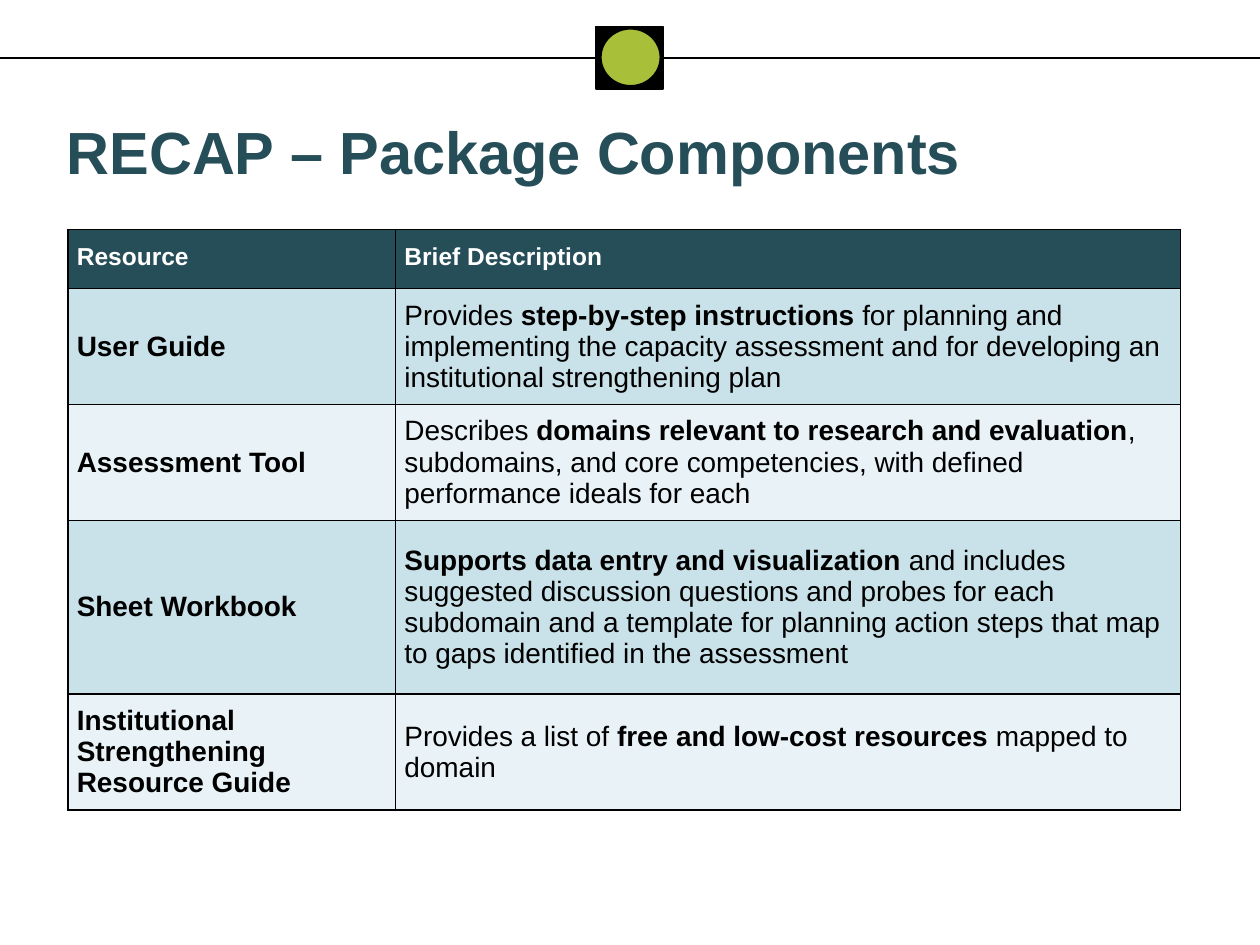
import pptx
import pptx.util
import pptx.dml.color
import pptx.enum.shapes
import pptx.enum.text
import pptx.oxml
import pptx.oxml.ns
from dataclasses import dataclass

Inches = pptx.util.Inches
Pt = pptx.util.Pt
Shape = pptx.enum.shapes.MSO_SHAPE
Anchor = pptx.enum.text.MSO_ANCHOR


@dataclass(frozen=True)
class Theme:
    font: str = "Arial"
    black: str = "000000"
    white: str = "FFFFFF"
    teal: str = "264E59"
    green: str = "A7BF39"
    bands: tuple = ("C9E1E8", "E9F3F7")
    title: int = 34
    head: int = 14
    body: int = 16


def rgb(code):
    return pptx.dml.color.RGBColor.from_string(code)


class Deck:
    def __init__(self, theme):
        self.theme = theme
        self.file = pptx.Presentation()
        self.file.slide_width, self.file.slide_height = Inches(10), Inches(7.5)
        self.slide = self.file.slides.add_slide(self.file.slide_layouts[6])

    def text(self, para, runs, size, color):
        """Add (text, bold) runs to a paragraph."""
        for words, bold in runs:
            run = para.add_run()
            run.text = words
            run.font.name, run.font.size, run.font.bold = self.theme.font, Pt(size), bold
            run.font.color.rgb = rgb(color)

    def rule(self, start, end, width):
        line = self.slide.shapes.add_connector(
            pptx.enum.shapes.MSO_CONNECTOR.STRAIGHT, *map(Inches, start + end))
        line.line.color.rgb = rgb(self.theme.black)
        line.line.width = Pt(width)
        props = line._element.spPr
        props.append(pptx.oxml.parse_xml(
            f'<a:effectLst {pptx.oxml.ns.nsdecls("a")}/>'))

    def shape(self, kind, box, fill, width):
        item = self.slide.shapes.add_shape(kind, *map(Inches, box))
        item.shadow.inherit = False
        item.fill.solid()
        item.fill.fore_color.rgb = rgb(fill)
        item.line.color.rgb = rgb(self.theme.black)
        item.line.width = Pt(width)

    def title(self, words, box):
        frame = self.slide.shapes.add_textbox(*map(Inches, box)).text_frame
        frame.word_wrap = True
        frame.margin_left = 0
        para = frame.paragraphs[0]
        para.space_after = Pt(8)
        self.text(para, [(words, True)], self.theme.title, self.theme.teal)

    def border(self, cell, width):
        """Draw all four cell edges; they must come before the fill."""
        props = cell._tc.get_or_add_tcPr()
        for spot, side in enumerate(("lnL", "lnR", "lnT", "lnB")):
            props.insert(spot, pptx.oxml.parse_xml(
                f'<a:{side} {pptx.oxml.ns.nsdecls("a")} w="{Pt(width)}"><a:solidFill>'
                f'<a:srgbClr val="{self.theme.black}"/></a:solidFill></a:{side}>'))

    def cell(self, cell, runs, fill, size, color, pitch=None):
        cell.fill.solid()
        cell.fill.fore_color.rgb = rgb(fill)
        cell.vertical_anchor = Anchor.MIDDLE
        cell.margin_left = cell.margin_right = Inches(0.07)
        cell.margin_top = cell.margin_bottom = 0
        para = cell.text_frame.paragraphs[0]
        if pitch:
            para.line_spacing = Pt(pitch)
        self.text(para, runs, size, color)
        self.border(cell, 1)

    def table(self, spot, widths, heights, head, rows):
        look = self.theme
        box = (*spot, sum(widths), sum(heights))
        grid = self.slide.shapes.add_table(
            len(heights), len(widths), *map(Inches, box)).table
        for col, width in zip(grid.columns, widths):
            col.width = Inches(width)
        for row, height in zip(grid.rows, heights):
            row.height = Inches(height)
        for c, words in enumerate(head):
            self.cell(grid.cell(0, c), [(words, True)], look.teal,
                      look.head, look.white, pitch=13)
        for r, (name, runs) in enumerate(rows, 1):
            fill = look.bands[(r - 1) % 2]
            for c, part in enumerate(([(name, True)], runs)):
                self.cell(grid.cell(r, c), part, fill, look.body, look.black)


ROWS = [
    ("User Guide", [
        ("Provides ", False), ("step-by-step instructions ", True),
        ("for planning and implementing the capacity assessment and for "
         "developing an institutional strengthening plan", False)]),
    ("Assessment Tool", [
        ("Describes ", False),
        ("domains relevant to research and evaluation", True),
        (", subdomains, and core competencies, with defined performance "
         "ideals for each", False)]),
    ("Sheet Workbook", [
        ("Supports data entry and visualization ", True),
        ("and includes suggested discussion questions and probes for each "
         "subdomain and a template for planning action steps that map to "
         "gaps identified in the assessment", False)]),
    ("Institutional Strengthening Resource Guide", [
        ("Provides a list of ", False), ("free and low-cost resources ", True),
        ("mapped to domain", False)]),
]


def main():
    theme = Theme()
    deck = Deck(theme)
    deck.rule((0, 0.46), (10, 0.46), 0.75)
    deck.shape(Shape.RECTANGLE, (4.73, 0.21, 0.53, 0.5), theme.black, 1)
    deck.shape(Shape.OVAL, (4.77, 0.23, 0.47, 0.45), theme.green, 0.75)
    deck.title("RECAP – Package Components", (0.53, 0.86, 7.47, 0.92))
    deck.table((0.54, 1.82), (2.6, 6.23), (0.47, 0.92, 0.92, 1.38, 0.92),
               ("Resource", "Brief Description"), ROWS)
    deck.file.save("out.pptx")


if __name__ == "__main__":
    main()
